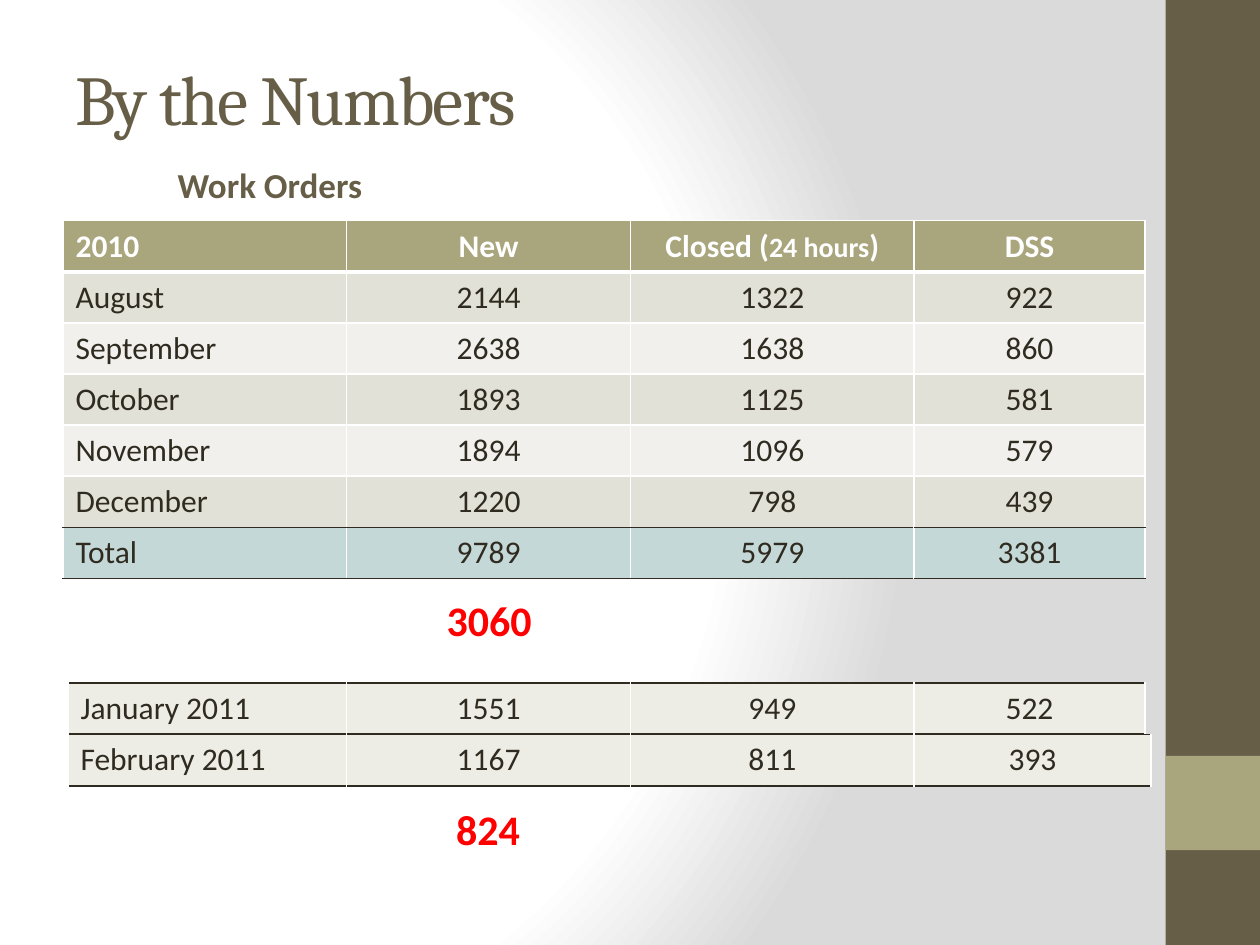
"""Build the "By the Numbers" slide of monthly work-order counts."""
from itertools import accumulate

from pptx import Presentation
from pptx.dml.color import RGBColor
from pptx.enum.shapes import MSO_SHAPE
from pptx.enum.text import MSO_ANCHOR, MSO_AUTO_SIZE, PP_ALIGN
from pptx.oxml import parse_xml
from pptx.oxml.ns import nsdecls
from pptx.util import Cm, Pt

RECTANGLE = MSO_SHAPE.RECTANGLE
MIDDLE = MSO_ANCHOR.MIDDLE
NO_AUTOFIT = MSO_AUTO_SIZE.NONE
LEFT, CENTER = PP_ALIGN.LEFT, PP_ALIGN.CENTER

THEME = {
    "heading_font": "Cambria", "body_font": "Calibri",
    "title": 40, "subtitle": 20, "table": 18, "small": 16, "callout": 24,
    "brown": "675E47", "olive": "A9A57C", "ink": "2F2B20", "white": "FFFFFF",
    "bands": ("E2E1D7", "F1F0EC"), "total": "C4D8D7", "recent": "EEEDE5",
    "alert": "FF0000", "background": "DADADA",
}

TITLE = "By the Numbers"
SUBTITLE = "Work Orders"
COLUMNS = [
    ("2010", "August", "September", "October", "November", "December", "Total"),
    ("New", "2144", "2638", "1893", "1894", "1220", "9789"),
    ("Closed (24 hours)", "1322", "1638", "1125", "1096", "798", "5979"),
    ("DSS", "922", "860", "581", "579", "439", "3381"),
]
SMALL_HEADER_PART = "24 hours"
RECENT_MONTHS = [
    (("January 2011", "1551", "949", "522"), 13.77, 4.65),
    (("February 2011", "1167", "811", "393"), 14.81, 4.77),
]
CALLOUTS = [
    ("3060", (7.42, 11.86, 4.88, 1.27), True),
    ("824", (8.94, 16.08, 1.8, 1.27), False),
]
SIDEBAR = [((23.5, 0, 1.9, 19.05), "brown"), ((23.5, 15.24, 1.9, 1.9), "olive")]

TABLE_LEFT, TABLE_TOP = 1.27, 4.45
RECENT_LEFT = 1.37
COLUMN_WIDTHS = (5.72, 5.72, 5.72, 4.65)
ROW_HEIGHT = 1.03


def lengths(box):
    return [Cm(value) for value in box]


def style_runs(paragraph, size, color, bold=False, font=THEME["body_font"]):
    for run in paragraph.runs:
        run.font.name = font
        run.font.size = Pt(size)
        run.font.bold = bold
        run.font.color.rgb = RGBColor.from_string(color)


def paint_background(slide):
    stops = ((0, THEME["white"]), (75, THEME["white"]), (100, THEME["background"]))
    stop_xml = "".join(f'<a:gs pos="{position * 1000}"><a:srgbClr val="{color}"/></a:gs>'
                       for position, color in stops)
    slide.element.cSld.insert(0, parse_xml(
        f'<p:bg {nsdecls("p", "a")}><p:bgPr><a:gradFill rotWithShape="1">'
        f'<a:gsLst>{stop_xml}</a:gsLst><a:path path="circle">'
        '<a:fillToRect l="20000" t="50000" r="100000" b="50000"/></a:path>'
        '</a:gradFill><a:effectLst/></p:bgPr></p:bg>'))


def add_sidebar(slide):
    for box, color in SIDEBAR:
        shape = slide.shapes.add_shape(RECTANGLE, *lengths(box))
        shape.shadow.inherit = False
        shape.fill.solid()
        shape.fill.fore_color.rgb = RGBColor.from_string(THEME[color])
        shape.line.fill.background()


def format_title(slide):
    title = slide.shapes.title
    title.left, title.top, title.width, title.height = lengths((1.27, 0.76, 21.16, 2.41))
    frame = title.text_frame
    frame.text = TITLE
    frame.auto_size = NO_AUTOFIT
    frame.vertical_anchor = MIDDLE
    paragraph = frame.paragraphs[0]
    paragraph.alignment = LEFT
    style_runs(paragraph, THEME["title"], THEME["brown"], font=THEME["heading_font"])
    paragraph.runs[0]._r.get_or_add_rPr().set("spc", "-100")


def add_label(slide, text, box, size, color, alignment, wrap=True):
    frame = slide.shapes.add_textbox(*lengths(box)).text_frame
    frame.text = text
    frame.word_wrap = wrap
    paragraph = frame.paragraphs[0]
    paragraph.alignment = alignment
    style_runs(paragraph, size, color, bold=True)
    return frame


def set_borders(cell, top, bottom):
    properties = cell._tc.get_or_add_tcPr()
    side = (THEME["white"], 1)
    edges = (("L", side), ("R", side), ("T", top), ("B", bottom))
    for index, (edge, (color, width)) in enumerate(edges):
        properties.insert(index, parse_xml(
            f'<a:ln{edge} {nsdecls("a")} w="{Pt(width)}"><a:solidFill>'
            f'<a:srgbClr val="{color}"/></a:solidFill></a:ln{edge}>'))


def fill_cell(cell, text, fill, alignment, top, bottom, header=False):
    cell.fill.solid()
    cell.fill.fore_color.rgb = RGBColor.from_string(fill)
    paragraph = cell.text_frame.paragraphs[0]
    paragraph.alignment = alignment
    before, small, after = text.partition(SMALL_HEADER_PART)
    for part in filter(None, (before, small, after)):
        paragraph.add_run().text = part
    style_runs(paragraph, THEME["table"], THEME["white" if header else "ink"], header)
    for run in paragraph.runs:
        if run.text == SMALL_HEADER_PART:
            run.font.size = Pt(THEME["small"])
    set_borders(cell, top, bottom)


def add_table(slide, left, top, widths, row_count):
    box = (left, top, sum(widths), ROW_HEIGHT * row_count)
    table = slide.shapes.add_table(row_count, len(widths), *lengths(box)).table
    table.first_row = table.horz_banding = False
    for column, width in zip(table.columns, widths):
        column.width = Cm(width)
    for row in table.rows:
        row.height = Cm(ROW_HEIGHT)
    return table


def add_month_columns(slide):
    row_count = len(COLUMNS[0])
    month_fills = [THEME["bands"][index % 2] for index in range(row_count - 2)]
    fills = [THEME["olive"], *month_fills, THEME["total"]]
    light, heavy, dark = (THEME["white"], 1), (THEME["white"], 3), (THEME["ink"], 1)
    rules = [light, heavy, *[light] * (row_count - 3), dark, dark]
    lefts = accumulate(COLUMN_WIDTHS, initial=TABLE_LEFT)
    for index, (texts, left, width) in enumerate(zip(COLUMNS, lefts, COLUMN_WIDTHS)):
        table = add_table(slide, left, TABLE_TOP, [width], row_count)
        for row, text in enumerate(texts):
            fill_cell(table.cell(row, 0), text, fills[row], CENTER if index else LEFT,
                      rules[row], rules[row + 1], header=row == 0)


def add_recent_months(slide):
    first_width = COLUMN_WIDTHS[0] + TABLE_LEFT - RECENT_LEFT
    rule = (THEME["ink"], 1)
    for texts, top, last_width in RECENT_MONTHS:
        widths = [first_width, *COLUMN_WIDTHS[1:3], last_width]
        table = add_table(slide, RECENT_LEFT, top, widths, 1)
        for index, text in enumerate(texts):
            fill_cell(table.cell(0, index), text, THEME["recent"],
                      CENTER if index else LEFT, rule, rule)


def main():
    presentation = Presentation()
    presentation.slide_width, presentation.slide_height = Cm(25.4), Cm(19.05)
    slide = presentation.slides.add_slide(presentation.slide_layouts.get_by_name("Title Only"))
    paint_background(slide)
    add_sidebar(slide)
    format_title(slide)
    subtitle = add_label(slide, SUBTITLE, (1.27, 3.18, 21.16, 1.07),
                         THEME["subtitle"], THEME["brown"], LEFT)
    subtitle.margin_left = Cm(2.31)
    add_month_columns(slide)
    add_recent_months(slide)
    for text, box, wrap in CALLOUTS:
        add_label(slide, text, box, THEME["callout"], THEME["alert"], CENTER, wrap)
    presentation.save("out.pptx")


if __name__ == "__main__":
    main()
